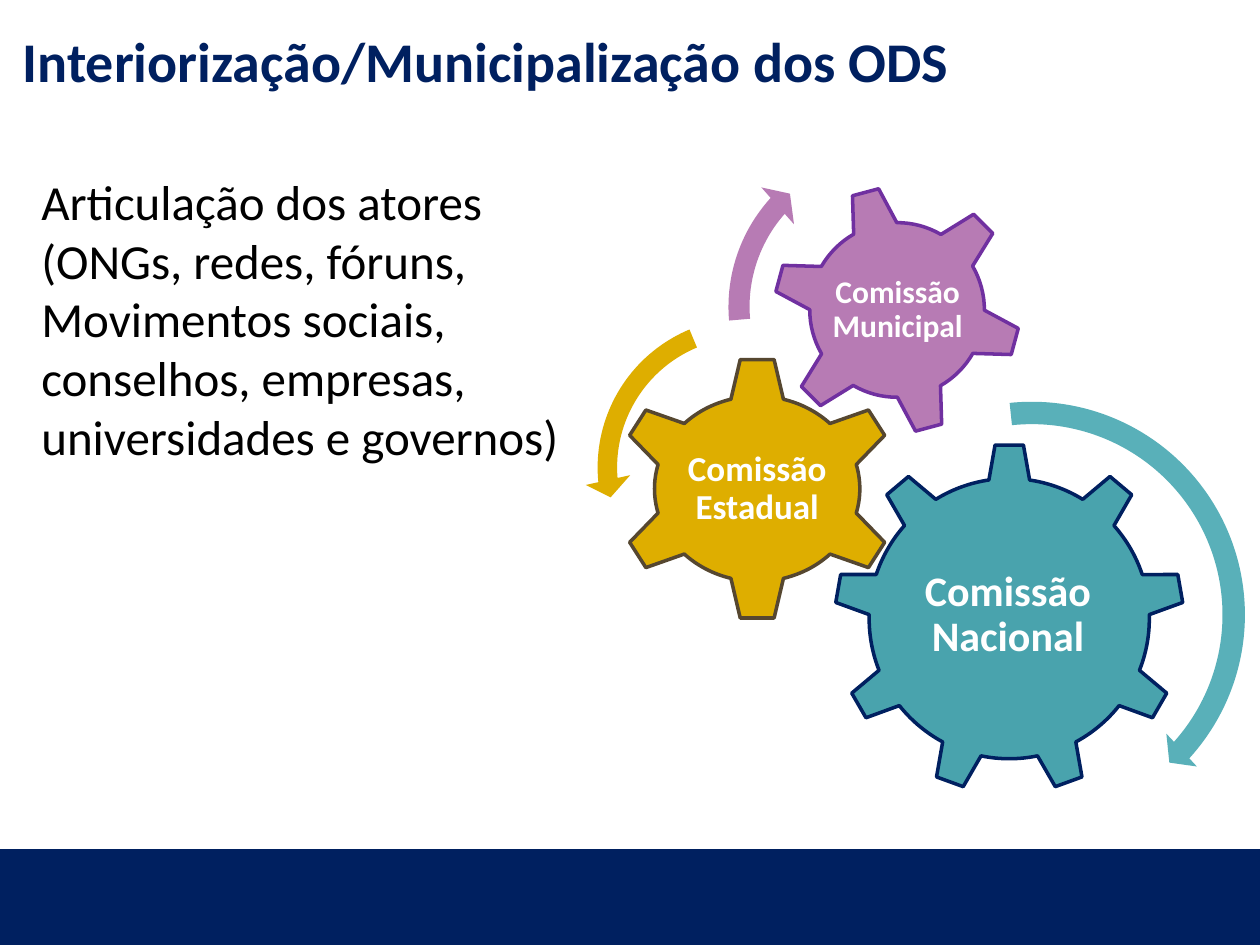
from pptx import Presentation
from pptx import util as u
from pptx.dml.color import RGBColor
from pptx.enum import shapes, text

# Theme: colours and type sizes
THEME = {
    "font": "Calibri", "navy": "002060", "white": "FFFFFF", "black": "000000",
    "teal": "49A3AD", "light_teal": "59B0B9", "gold": "DEAE00", "brown": "564730",
    "mauve": "B77BB4", "purple": "7030A0",
    "title": 32, "body": 28, "national": 24, "state": 20, "municipal": 18, "line": 2,
}
KIND = shapes.MSO_SHAPE

prs = Presentation()
prs.slide_width, prs.slide_height = u.Inches(10), u.Inches(7.5)
COL, ROW = prs.slide_width / 100, prs.slide_height / 75  # grid of 100 x 75 cells
s = prs.slides.add_slide(prs.slide_layouts[5])


def cells(x, y, w, h):
    """Turn grid columns and rows into left, top, width and height."""
    return [u.Emu(round(n * size)) for n, size in zip((x, y, w, h), (COL, ROW) * 2)]


def write(sp, lines, size, color, bold=False, align=text.PP_ALIGN.LEFT,
          anchor=text.MSO_ANCHOR.TOP, spacing=1.0, inset=None):
    tf = sp.text_frame
    tf.word_wrap = True
    tf.auto_size = text.MSO_AUTO_SIZE.NONE
    tf.vertical_anchor = anchor
    if inset is not None:
        tf.margin_left = tf.margin_right = tf.margin_top = tf.margin_bottom = u.Inches(inset)
    for i, line in enumerate(lines):
        p = tf.add_paragraph() if i else tf.paragraphs[0]
        p.alignment, p.line_spacing = align, spacing
        p.space_before = p.space_after = u.Pt(0)
        r = p.add_run()
        r.text = line
        r.font.name, r.font.size, r.font.bold = THEME["font"], u.Pt(THEME[size]), bold
        r.font.color.rgb = RGBColor.from_string(THEME[color])


# Title
title = s.shapes.title
title.left, title.top, title.width, title.height = cells(0.8, 1.6, 84.4, 6.4)
write(title, ["Interiorização/Municipalização dos ODS"], "title", "navy", bold=True)

# Body text
body = s.shapes.add_textbox(*cells(2.3, 13.1, 50.8, 24.6))
write(body, ["Articulação dos atores", "(ONGs, redes, fóruns,",
             "Movimentos sociais, conselhos, empresas, universidades e governos)"],
      "body", "black")

# Footer bar, gears and turning arrows: kind, cells, rotation, fill, line, adjustments
parts = [
    (KIND.RECTANGLE, (0, 67.4, 100, 7.6), 0, "navy", None, ()),
    (KIND.GEAR_9, (66.2, 35.2, 27.8, 27.8), 0, "teal", "navy", ()),
    (KIND.GEAR_6, (48.8, 28.3, 22.6, 21), 0, "gold", "brown", ()),
    (KIND.GEAR_6, (61.3, 14.7, 19.8, 19.8), 345, "mauve", "purple", ()),
    (KIND.CIRCULAR_ARROW, (64.1, 31, 35.6, 35.6), 0, "light_teal", None,
     (0.05, 2.99, 25.25, 158.41, 0.05)),
    (KIND.LEFT_CIRCULAR_ARROW, (46.4, 24.2, 25.8, 25.8), 0, "gold", None,
     (0.06, 4.3, 104.89, 148.38, 0.07)),
    (KIND.CIRCULAR_ARROW, (56.7, 10.4, 27.9, 27.9), 0, "mauve", None,
     (0.06, 3.94, 133.14, 105.08, 0.07)),
]
for kind, place, rotation, fill, line, adjustments in parts:
    sp = s.shapes.add_shape(kind, *cells(*place))
    sp.shadow.inherit = False
    sp.rotation = rotation
    sp.fill.solid()
    sp.fill.fore_color.rgb = RGBColor.from_string(THEME[fill])
    if line:
        sp.line.color.rgb = RGBColor.from_string(THEME[line])
        sp.line.width = u.Pt(THEME["line"])
    else:
        sp.line.fill.background()
    for i, value in enumerate(adjustments):
        sp.adjustments[i] = value

# Gear labels, each wide enough for its longest word
for label, size, place in [
    ("Comissão Nacional", "national", (71.7, 41.7, 16.6, 14.3)),
    ("Comissão Estadual", "state", (53.9, 33.6, 12.4, 10.4)),
    ("Comissão Municipal", "municipal", (65.5, 19.1, 11.5, 11.1)),
]:
    write(s.shapes.add_textbox(*cells(*place)), [label], size, "white", bold=True,
          align=text.PP_ALIGN.CENTER, anchor=text.MSO_ANCHOR.MIDDLE, spacing=0.9, inset=0.03)

prs.save("out.pptx")
